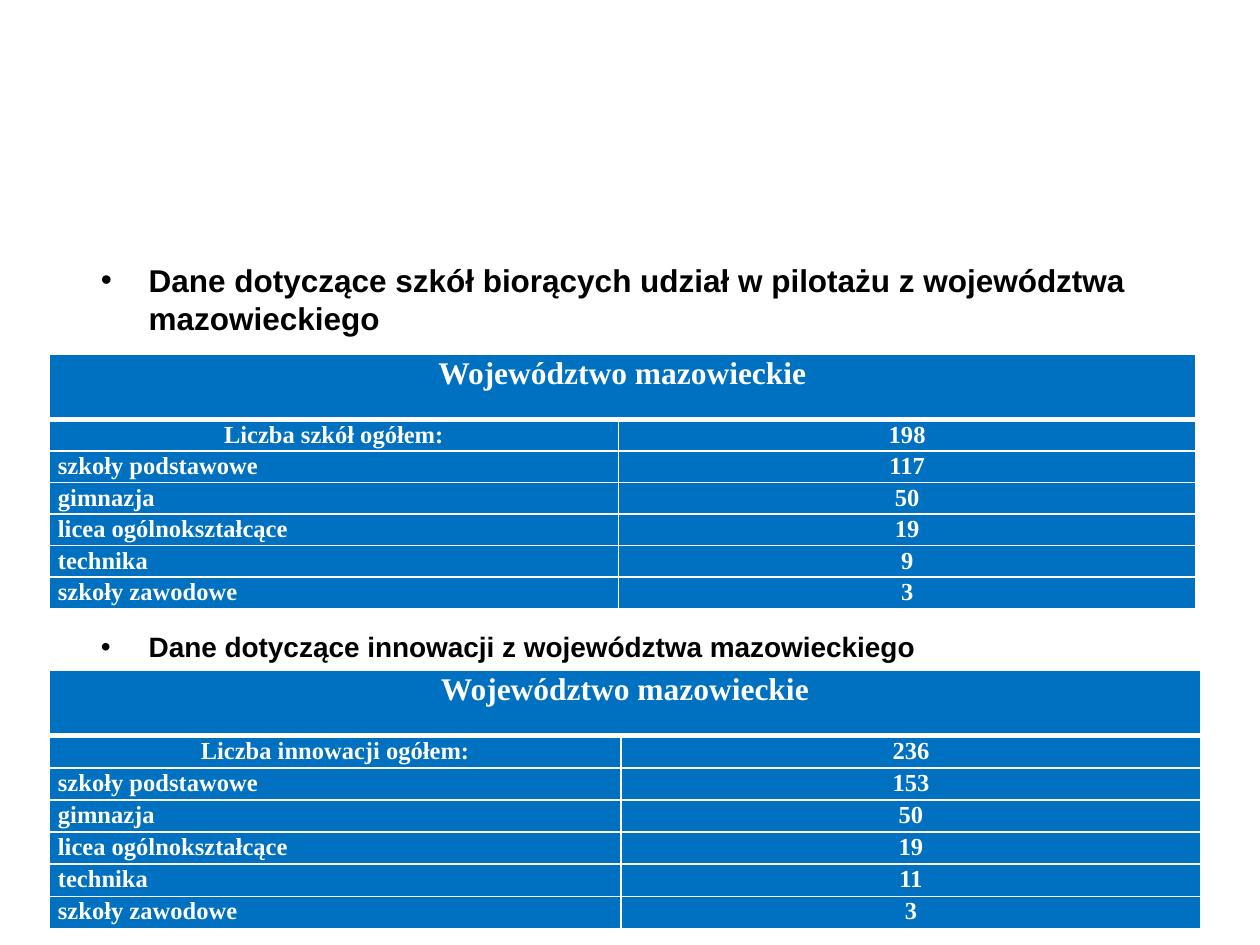
from lxml import etree
from pptx import Presentation
from pptx import util as u
from pptx.dml.color import RGBColor
from pptx.enum import text
from pptx.oxml.ns import qn

BLACK = RGBColor(0x00, 0x00, 0x00)
WHITE = RGBColor(0xFF, 0xFF, 0xFF)
BLUE = RGBColor(0x00, 0x70, 0xC0)

REGION = "Województwo mazowieckie"
SCHOOL_TYPES = ["szkoły podstawowe", "gimnazja", "licea ogólnokształcące",
                "technika", "szkoły zawodowe"]
HEADER_HEIGHT = 0.52


def format_font(font, name, size, color):
    font.name = name
    font.size = u.Pt(size)
    font.bold = True
    font.color.rgb = color


def place_bullet(placeholder, wording, top, height, size):
    """Move a body placeholder and fill it with one bulleted heading."""
    placeholder.left, placeholder.top = u.Inches(0.2), u.Inches(top)
    placeholder.width, placeholder.height = u.Inches(9.29), u.Inches(height)
    frame = placeholder.text_frame
    frame.auto_size = text.MSO_AUTO_SIZE.NONE
    frame.text = wording
    paragraph = frame.paragraphs[0]
    paragraph.space_before = u.Pt(0)
    properties = paragraph._p.get_or_add_pPr()
    properties.set("marL", str(u.Inches(0.88)))
    properties.set("indent", str(u.Inches(-0.38)))
    etree.SubElement(properties, qn("a:buChar"), char="•")
    format_font(paragraph.runs[0].font, "Arial", size, BLACK)


def set_borders(cell, top, bottom):
    """Draw white cell borders; top and bottom are widths in points."""
    properties = cell._tc.get_or_add_tcPr()
    for side, width in (("L", 1), ("R", 1), ("T", top), ("B", bottom)):
        line = etree.SubElement(properties, qn(f"a:ln{side}"), w=str(u.Pt(width)))
        fill = etree.SubElement(line, qn("a:solidFill"))
        etree.SubElement(fill, qn("a:srgbClr"), val=str(WHITE))


def format_cell(cell, wording, size, alignment):
    cell.fill.solid()
    cell.fill.fore_color.rgb = BLUE
    cell.margin_left = cell.margin_right = u.Inches(0.07)
    cell.margin_top = cell.margin_bottom = 0
    cell.text = wording
    paragraph = cell.text_frame.paragraphs[0]
    paragraph.alignment = alignment
    paragraph.line_spacing = 1.07
    format_font(paragraph.font, "Times New Roman", size, WHITE)
    for run in paragraph.runs:
        format_font(run.font, "Times New Roman", size, WHITE)


def add_count_table(slide, top, height, widths, total_label, total, counts):
    """Add a region table: merged header, total, one row per school type."""
    rows = [(REGION, ""), (total_label, total), *zip(SCHOOL_TYPES, counts)]
    table = slide.shapes.add_table(
        len(rows), 2, u.Inches(0.39), u.Inches(top),
        u.Inches(sum(widths)), u.Inches(height)).table
    for column, width in zip(table.columns, widths):
        column.width = u.Inches(width)
    row_height = (height - HEADER_HEIGHT) / (len(rows) - 1)

    for row_index, values in enumerate(rows):
        table.rows[row_index].height = u.Inches(row_height if row_index else HEADER_HEIGHT)
        for column_index, value in enumerate(values):
            cell = table.cell(row_index, column_index)
            set_borders(cell, top=3 if row_index == 1 else 1,
                        bottom=3 if row_index == 0 else 1)
            is_type_label = row_index > 1 and column_index == 0
            alignment = text.PP_ALIGN.LEFT if is_type_label else text.PP_ALIGN.CENTER
            format_cell(cell, str(value), 14 if row_index else 18, alignment)
    table.cell(0, 0).merge(table.cell(0, 1))


def main():
    presentation = Presentation()
    presentation.slide_width, presentation.slide_height = u.Inches(10), u.Inches(7.5)
    slide = presentation.slides.add_slide(presentation.slide_layouts[3])

    # The slide has no title
    title = slide.shapes.title
    title.element.getparent().remove(title.element)

    # Schools in the pilot
    place_bullet(slide.placeholders[1],
                 "Dane dotyczące szkół biorących udział w pilotażu z województwa mazowieckiego",
                 top=2.02, height=0.71, size=18)
    add_count_table(slide, 2.81, 2.02, (4.52, 4.58),
                    "Liczba szkół ogółem:", 198, [117, 50, 19, 9, 3])

    # Innovations
    place_bullet(slide.placeholders[2],
                 "Dane dotyczące innowacji z województwa mazowieckiego",
                 top=4.95, height=0.36, size=16)
    add_count_table(slide, 5.32, 2.05, (4.54, 4.6),
                    "Liczba innowacji ogółem:", 236, [153, 50, 19, 11, 3])

    presentation.save("out.pptx")


if __name__ == "__main__":
    main()
